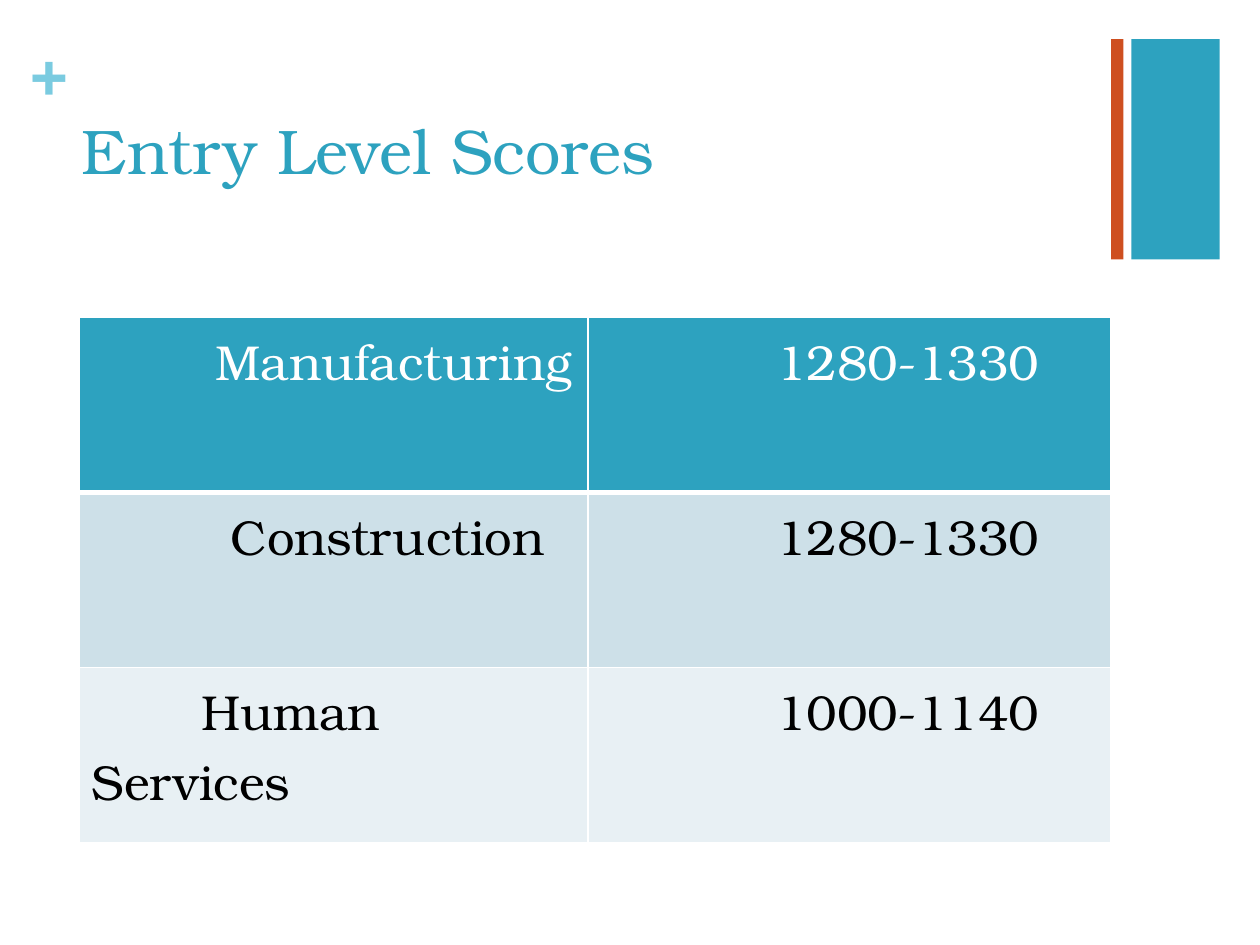
from dataclasses import dataclass

from lxml import etree
from pptx import Presentation
from pptx.dml.color import RGBColor
from pptx.enum.shapes import MSO_SHAPE
from pptx.enum.text import MSO_ANCHOR
from pptx.oxml.ns import qn
from pptx.util import Cm, Pt

RECTANGLE = MSO_SHAPE.RECTANGLE
TOP = MSO_ANCHOR.TOP
FONT = "TeX Gyre Bonum"
TEAL, ORANGE, WHITE, BLACK = "2DA2BF", "CE4F20", "FFFFFF", "000000"
BLANK_LAYOUT = 6


@dataclass(frozen=True)
class Box:
    left: float
    top: float
    width: float
    height: float

    def lengths(self) -> tuple:
        return Cm(self.left), Cm(self.top), Cm(self.width), Cm(self.height)


@dataclass(frozen=True)
class Bar:
    box: Box
    color: str


@dataclass(frozen=True)
class Label:
    text: str
    box: Box
    color: str
    bold: bool = False
    margin_x: float = 0.25
    margin_y: float = 0.13


@dataclass(frozen=True)
class LevelRow:
    field: str
    field_indent: float
    score_range: str
    fill: str
    color: str
    bottom_border: float = 1


BARS = [
    Bar(Box(22.81, 0.79, 1.78, 4.44), TEAL),
    Bar(Box(22.4, 0.79, 0.25, 4.44), ORANGE),
]
LABELS = [
    Label("+", Box(0.61, 0.64, 0.74, 1.55), "7ACBE0", True, 0, 0),
    Label("Entry Level Scores", Box(1.4, 2.11, 20.98, 2.36), TEAL),
]
ROWS = [
    LevelRow("Manufacturing", 2.5, "1280-1330", TEAL, WHITE, 3),
    LevelRow("Construction", 2.8, "1280-1330", "CDE0E8", BLACK),
    LevelRow("Human Services", 2.2, "1000-1140", "E8F0F4", BLACK),
]
TABLE_BOX = Box(1.6, 6.4, 20.8, 10.59)
COLUMN_WIDTHS = (10.25, 10.55)
SCORE_INDENT = 3.55


def rgb(color: str) -> RGBColor:
    return RGBColor.from_string(color)


def write(paragraph, text: str, size: float, color: str, bold: bool = False) -> None:
    run = paragraph.add_run()
    run.text = text
    formats = {"name": FONT, "size": Pt(size), "bold": bold}
    for attribute, value in formats.items():
        setattr(run.font, attribute, value)
    run.font.color.rgb = rgb(color)


def add_bar(slide, bar: Bar) -> None:
    shape = slide.shapes.add_shape(RECTANGLE, *bar.box.lengths())
    shape.shadow.inherit = False
    shape.fill.solid()
    shape.fill.fore_color.rgb = rgb(bar.color)
    shape.line.fill.background()


def add_label(slide, label: Label) -> None:
    frame = slide.shapes.add_textbox(*label.box.lengths()).text_frame
    formats = {
        "word_wrap": True,
        "vertical_anchor": TOP,
        "margin_left": Cm(label.margin_x),
        "margin_right": Cm(label.margin_x),
        "margin_top": Cm(label.margin_y),
        "margin_bottom": Cm(label.margin_y),
    }
    for attribute, value in formats.items():
        setattr(frame, attribute, value)
    write(frame.paragraphs[0], label.text, 36, label.color, label.bold)


def set_borders(cell, bottom: float) -> None:
    properties = cell._tc.get_or_add_tcPr()
    widths = {"a:lnL": 1, "a:lnR": 1, "a:lnT": 1, "a:lnB": bottom}
    for tag, width in widths.items():
        line = etree.SubElement(properties, qn(tag), w=str(Pt(width)))
        fill = etree.SubElement(line, qn("a:solidFill"))
        etree.SubElement(fill, qn("a:srgbClr"), val=WHITE)


def fill_cell(cell, text: str, indent: float, row: LevelRow) -> None:
    set_borders(cell, row.bottom_border)
    cell.fill.solid()
    cell.fill.fore_color.rgb = rgb(row.fill)
    paragraph = cell.text_frame.paragraphs[0]
    paragraph.line_spacing = 1.07
    properties = paragraph._p.get_or_add_pPr()
    properties.set("marL", "0")
    properties.set("indent", str(Cm(indent)))
    write(paragraph, text, 28, row.color)


def add_level_table(slide) -> None:
    table = slide.shapes.add_table(
        len(ROWS), len(COLUMN_WIDTHS), *TABLE_BOX.lengths()
    ).table
    for column, width in zip(table.columns, COLUMN_WIDTHS):
        column.width = Cm(width)
    for index, row in enumerate(ROWS):
        fill_cell(table.cell(index, 0), row.field, row.field_indent, row)
        fill_cell(table.cell(index, 1), row.score_range, SCORE_INDENT, row)


def main() -> None:
    presentation = Presentation()
    presentation.slide_width = Cm(25.4)
    presentation.slide_height = Cm(19.05)
    slide = presentation.slides.add_slide(presentation.slide_layouts[BLANK_LAYOUT])
    for bar in BARS:
        add_bar(slide, bar)
    for label in LABELS:
        add_label(slide, label)
    add_level_table(slide)
    presentation.save("out.pptx")


if __name__ == "__main__":
    main()
